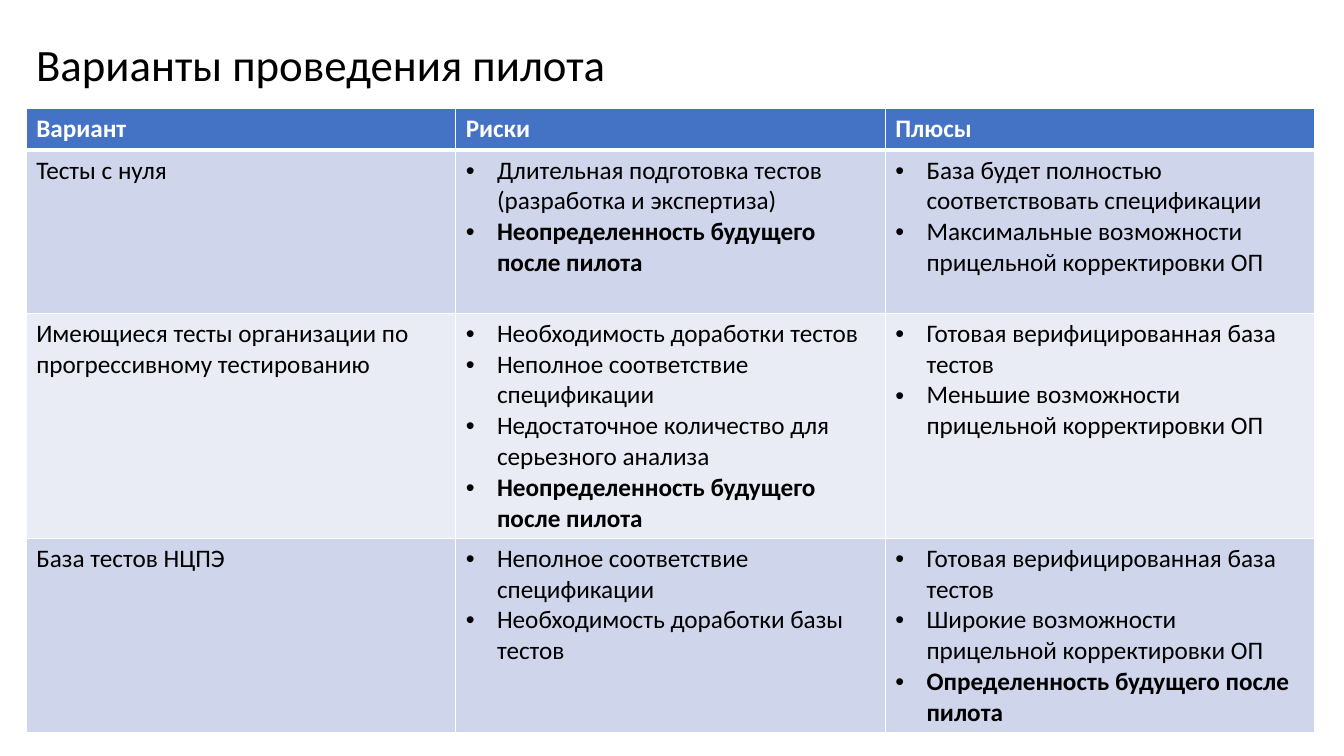
from lxml import etree
from pptx import Presentation
from pptx.dml.color import RGBColor
from pptx.enum.text import MSO_ANCHOR
from pptx.oxml.ns import qn
from pptx.util import Inches, Pt

MIDDLE = MSO_ANCHOR.MIDDLE
FONT = "Calibri"
COLORS = {
    "text": "000000",
    "header_text": "FFFFFF",
    "header": "4472C4",
    "odd_row": "CFD5EA",
    "even_row": "E9EBF5",
    "border": "FFFFFF",
}
LEFT = 0.26
COLUMN_WIDTH = 4.26
BULLET_INDENT = 0.31
ROW_HEIGHTS = [0.41, 1.62, 2.23, 1.93]

HEADINGS = ["Вариант", "Риски", "Плюсы"]
UNCERTAIN = "Неопределенность будущего после пилота"
CERTAIN = "Определенность будущего после пилота"
KEY_POINTS = {UNCERTAIN, CERTAIN}
READY_BASE = "Готовая верифицированная база тестов"
PARTIAL_MATCH = "Неполное соответствие спецификации"
OPTIONS = [
    ("Тесты с нуля",
     ["Длительная подготовка тестов (разработка и экспертиза)", UNCERTAIN],
     ["База будет полностью соответствовать спецификации",
      "Максимальные возможности прицельной корректировки ОП"]),
    ("Имеющиеся тесты организации по прогрессивному тестированию",
     ["Необходимость доработки тестов", PARTIAL_MATCH,
      "Недостаточное количество для серьезного анализа", UNCERTAIN],
     [READY_BASE, "Меньшие возможности прицельной корректировки ОП"]),
    ("База тестов НЦПЭ",
     [PARTIAL_MATCH, "Необходимость доработки базы тестов"],
     [READY_BASE, "Широкие возможности прицельной корректировки ОП", CERTAIN]),
]


def rgb(name):
    return RGBColor.from_string(COLORS[name])


def style_font(paragraph, size, color, bold=False):
    font = paragraph.font
    font.name, font.size, font.bold = FONT, Pt(size), bold
    font.color.rgb = rgb(color)


def add_bullet(paragraph):
    properties = paragraph._p.get_or_add_pPr()
    properties.set("marL", str(Inches(BULLET_INDENT)))
    properties.set("indent", str(-Inches(BULLET_INDENT)))
    bullet_font = etree.Element(qn("a:buFont"), typeface="Arial")
    bullet = etree.Element(qn("a:buChar"), char="•")
    properties.insert(0, bullet_font)
    properties.insert(1, bullet)


def set_borders(cell, top, bottom):
    """Draw all four sides; top and bottom are widths in points."""
    properties = cell._tc.get_or_add_tcPr()
    for side, width in (("L", 1), ("R", 1), ("T", top), ("B", bottom)):
        line = etree.SubElement(properties, qn(f"a:ln{side}"), w=str(Pt(width)))
        fill = etree.SubElement(line, qn("a:solidFill"))
        etree.SubElement(fill, qn("a:srgbClr"), val=COLORS["border"])


def fill_cell(cell, lines, fill, color="text", bulleted=False, bold=False):
    cell.fill.solid()
    cell.fill.fore_color.rgb = rgb(fill)
    frame = cell.text_frame
    for index, line in enumerate(lines):
        paragraph = frame.add_paragraph() if index else frame.paragraphs[0]
        paragraph.text = line
        style_font(paragraph, 18, color, bold or line in KEY_POINTS)
        if bulleted:
            add_bullet(paragraph)


def add_title(slide, text):
    box = slide.shapes.add_textbox(
        Inches(LEFT), Inches(0.32), Inches(11.5), Inches(0.68))
    frame = box.text_frame
    frame.word_wrap = True
    frame.vertical_anchor = MIDDLE
    title = frame.paragraphs[0]
    title.text = text
    title.line_spacing = 0.9
    style_font(title, 32, "text")


def add_options_table(slide):
    table = slide.shapes.add_table(
        len(ROW_HEIGHTS), len(HEADINGS), Inches(LEFT), Inches(1.08),
        Inches(COLUMN_WIDTH * len(HEADINGS)), Inches(sum(ROW_HEIGHTS))).table
    for column in table.columns:
        column.width = Inches(COLUMN_WIDTH)
    for index, height in enumerate(ROW_HEIGHTS):
        table.rows[index].height = Inches(height)
        for cell in table.rows[index].cells:
            set_borders(cell, 3 if index == 1 else 1, 3 if index == 0 else 1)

    for column, heading in enumerate(HEADINGS):
        fill_cell(table.cell(0, column), [heading], "header", "header_text", bold=True)
    for row, (option, risks, benefits) in enumerate(OPTIONS, 1):
        fill = "odd_row" if row % 2 else "even_row"
        fill_cell(table.cell(row, 0), [option], fill)
        fill_cell(table.cell(row, 1), risks, fill, bulleted=True)
        fill_cell(table.cell(row, 2), benefits, fill, bulleted=True)


def main():
    presentation = Presentation()
    presentation.slide_width = Inches(13.33)
    presentation.slide_height = Inches(7.5)
    slide = presentation.slides.add_slide(presentation.slide_layouts[6])
    add_title(slide, "Варианты проведения пилота")
    add_options_table(slide)
    presentation.save("out.pptx")


if __name__ == "__main__":
    main()
